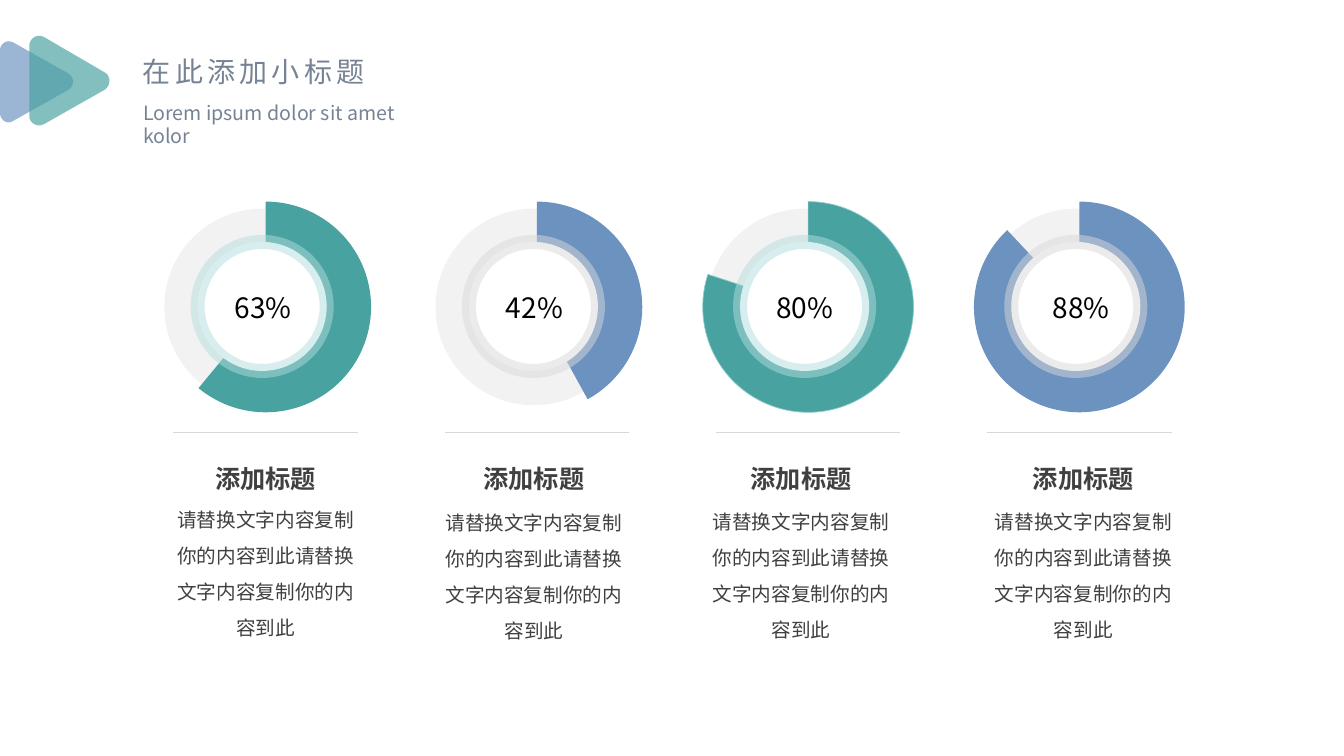
from dataclasses import dataclass

import pptx
import pptx.dml.color
import pptx.enum.shapes
import pptx.enum.text
import pptx.oxml.ns
import pptx.util
from lxml import etree

Inches = pptx.util.Inches
Pt = pptx.util.Pt
SHAPE = pptx.enum.shapes.MSO_SHAPE
ALIGN = pptx.enum.text.PP_ALIGN


@dataclass(frozen=True)
class Theme:
    font: str = "Noto Sans CJK SC"
    teal: str = "48A2A0"
    teal_rim: str = "B3DDDC"
    teal_edge: str = "8CCCCB"
    blue: str = "6C92C0"
    grey_rim: str = "D9D9D9"
    track: str = "F2F2F2"
    rule: str = "D8D8D8"
    white: str = "FFFFFF"
    heading: str = "768394"
    body: str = "404040"
    black: str = "000000"
    size_title: int = 20
    size_caption: int = 18
    size_body: int = 14


T = Theme()
COLUMN_STEP = 2.69
CAPTION = "添加标题"
BODY = "请替换文字内容复制你的内容到此请替换文字内容复制你的内容到此"

# label, drawn share, fill, rim, edge, label left, caption left, body top
COLUMNS = [
    ("63%", 61, T.teal, T.teal_rim, None, 2.23, 1.72, 4.86),
    ("42%", 42, T.blue, T.grey_rim, None, 4.92, 4.38, 4.89),
    ("80%", 80, T.teal, T.teal_rim, T.teal_edge, 7.6, 7.03, 4.88),
    ("88%", 88, T.blue, T.grey_rim, None, 10.34, 9.83, 4.88),
]

# Each rounded corner is a cubic curve: start, two controls, end
BLUE_ARROW = [
    [(0.13, 0.42), (0.07, 0.39), (0, 0.43), (0, 0.5)],
    [(0, 1.12), (0, 1.19), (0.07, 1.24), (0.13, 1.2)],
    [(0.68, 0.89), (0.74, 0.85), (0.74, 0.77), (0.68, 0.73)],
]
TEAL_ARROW = [
    [(0.44, 0.37), (0.37, 0.33), (0.29, 0.38), (0.29, 0.46)],
    [(0.29, 1.15), (0.29, 1.22), (0.37, 1.27), (0.44, 1.23)],
    [(1.04, 0.89), (1.1, 0.85), (1.1, 0.75), (1.04, 0.72)],
]


def apply(obj, formats):
    for name, value in formats.items():
        setattr(obj, name, value)


def rgb(color):
    return pptx.dml.color.RGBColor.from_string(color)


def paint(fill, color, alpha=None):
    """Solid fill, with opacity in percent when given."""
    fill.solid()
    fill.fore_color.rgb = rgb(color)
    if alpha is not None:
        clr = fill._xPr.find(".//" + pptx.oxml.ns.qn("a:srgbClr"))
        etree.SubElement(clr, pptx.oxml.ns.qn("a:alpha"), val=str(alpha * 1000))


def style(sp, color, alpha=None, line=None, width=0, line_alpha=None):
    sp.shadow.inherit = False
    paint(sp.fill, color, alpha)
    if line:
        sp.line.width = Pt(width)
        paint(sp.line.fill, line, line_alpha)
    else:
        sp.line.fill.background()


def add_text(s, box, text, size, color, wrap=True, bold=False, align=ALIGN.LEFT,
             line_spacing=None, tracking=None):
    tf = s.shapes.add_textbox(*map(Inches, box)).text_frame
    apply(tf, {"word_wrap": wrap,
               "auto_size": pptx.enum.text.MSO_AUTO_SIZE.SHAPE_TO_FIT_TEXT})
    p = tf.paragraphs[0]
    apply(p, {"alignment": align, "line_spacing": line_spacing})
    r = p.add_run()
    r.text = text
    apply(r.font, {"name": T.font, "size": Pt(size), "bold": bold})
    r.font.color.rgb = rgb(color)
    rPr = r.font._rPr
    etree.SubElement(rPr, pptx.oxml.ns.qn("a:ea"), typeface=T.font)
    if tracking:
        rPr.set("spc", str(tracking * 100))


def add_disc(s, left, top, size, shape=SHAPE.OVAL, **formats):
    sp = s.shapes.add_shape(shape, *map(Inches, (left, top, size, size)))
    style(sp, **formats)
    return sp


def curve_points(a, b, c, d, steps=10):
    for i in range(steps + 1):
        t = i / steps
        u = 1 - t
        yield tuple(u**3 * w + 3 * u * u * t * x + 3 * u * t * t * y + t**3 * z
                    for w, x, y, z in zip(a, b, c, d))


def add_rounded_arrow(s, corners, color):
    points = [(Inches(x), Inches(y))
              for corner in corners for x, y in curve_points(*corner)]
    builder = s.shapes.build_freeform(*points[0])
    builder.add_line_segments(points[1:], close=True)
    style(builder.convert_to_shape(), color, alpha=68)


def add_rule(s, left, right, top):
    line = s.shapes.add_connector(pptx.enum.shapes.MSO_CONNECTOR.STRAIGHT,
                                  *map(Inches, (right, top, left, top)))
    line.line.width = Pt(1)
    line.line.color.rgb = rgb(T.rule)
    etree.SubElement(line._element.spPr, pptx.oxml.ns.qn("a:effectLst"))


def add_gauge(s, offset, share, color, rim, edge):
    """Ring whose pie runs clockwise from the top over share percent."""
    add_disc(s, 1.63 + offset, 2.07, 1.95, color=T.track)
    pie = add_disc(s, 1.59 + offset, 2, 2.09, SHAPE.PIE,
                   color=color, line=edge, width=0.5)
    end_angle = (270 + 3.6 * share) % 360
    for i, angle in enumerate((270, end_angle)):
        pie.adjustments[i] = angle * 0.6
    add_disc(s, 1.96 + offset, 2.4, 1.28, color=T.white,
             line=rim, width=10, line_alpha=50)
    add_rule(s, 1.72 + offset, 3.55 + offset, 4.29)


def add_caption(s, left, body_top):
    add_text(s, (left, 4.49, 1.83, 0.45), CAPTION, T.size_caption, T.body,
             bold=True, align=ALIGN.CENTER, line_spacing=1.2)
    add_text(s, (left - 0.13, body_top, 2.09, 1.55), BODY, T.size_body, T.body,
             align=ALIGN.CENTER, line_spacing=1.54)


def main():
    prs = pptx.Presentation()
    apply(prs, {"slide_width": Inches(13.33), "slide_height": Inches(7.5)})
    s = prs.slides.add_slide(prs.slide_layouts[6])

    add_text(s, (1.32, 0.49, 2.46, 0.44), "在此添加小标题", T.size_title,
             T.heading, wrap=False, tracking=3)
    add_text(s, (1.32, 0.95, 3.19, 0.34), "Lorem ipsum dolor sit amet kolor",
             T.size_body, T.heading)
    add_rounded_arrow(s, BLUE_ARROW, T.blue)
    add_rounded_arrow(s, TEAL_ARROW, T.teal)

    for i, column in enumerate(COLUMNS):
        label, share, color, rim, edge, label_left, caption_left, body_top = column
        add_gauge(s, i * COLUMN_STEP, share, color, rim, edge)
        add_caption(s, caption_left, body_top)
        add_text(s, (label_left, 2.83, 0.82, 0.44), label, T.size_title, T.black)

    prs.save("out.pptx")


if __name__ == "__main__":
    main()
